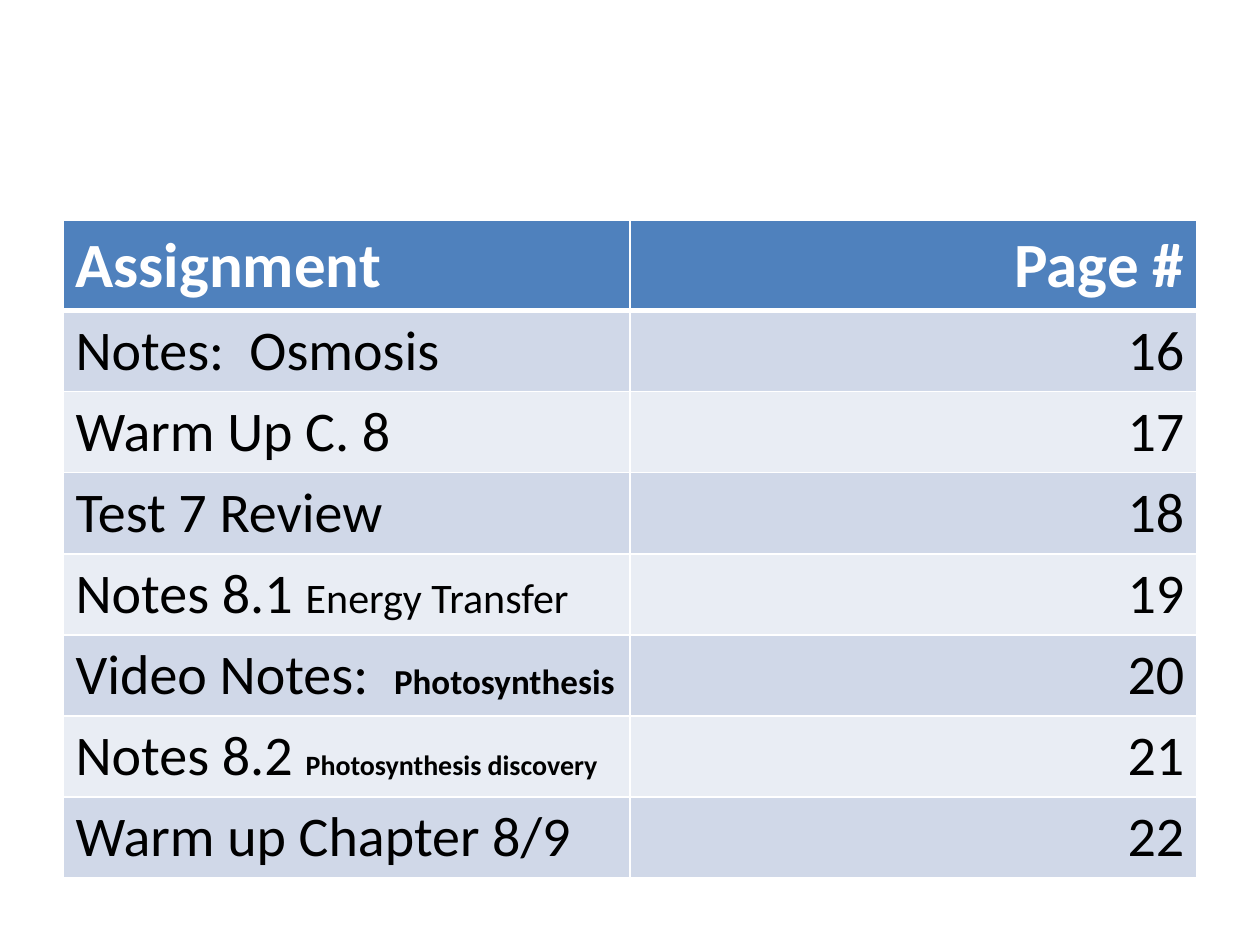
from lxml.etree import SubElement as Sub
from pptx import Presentation
from pptx.dml.color import RGBColor as RGB
from pptx.enum.text import PP_ALIGN as Align
from pptx.oxml.ns import qn
from pptx.util import Cm, Pt

COLORS = {
    "head": "4F81BD",
    "odd": "D0D8E8",
    "even": "E9EDF4",
    "line": "FFFFFF",
    "light": "FFFFFF",
    "dark": "000000",
}
HEAD = {"size": Pt(36), "bold": True}
BODY = {"size": Pt(32), "bold": False}

# Assignment, page, then an optional smaller tail with its format
ROWS = [
    ("Assignment", "Page #"),
    ("Notes:  Osmosis", "16"),
    ("Warm Up C. 8", "17"),
    ("Test 7 Review", "18"),
    ("Notes 8.1 ", "19", "Energy Transfer", {"size": Pt(24), "bold": False}),
    ("Video Notes:  ", "20", "Photosynthesis", {"size": Pt(20), "bold": True}),
    ("Notes 8.2 ", "21", "Photosynthesis discovery",
     {"size": Pt(16), "bold": True}),
    ("Warm up Chapter 8/9", "22"),
]


def add_run(para, text, style, color):
    run = para.add_run()
    run.text = text
    for name, value in {"name": "Calibri", **style}.items():
        setattr(run.font, name, value)
    run.font.color.rgb = RGB.from_string(COLORS[color])


def add_lines(cell, top, bottom):
    props = cell._tc.get_or_add_tcPr()
    for side, width in {"L": 1, "R": 1, "T": top, "B": bottom}.items():
        line = Sub(props, qn(f"a:ln{side}"), w=str(Pt(width)))
        fill = Sub(line, qn("a:solidFill"))
        Sub(fill, qn("a:srgbClr"), val=COLORS["line"])


def add_pages(slide, left, top, width, head, step):
    """Table of assignments with their page numbers."""
    height = head + step * (len(ROWS) - 1)
    table = slide.shapes.add_table(
        len(ROWS), 2, left, top, width, height).table
    for i, (task, page, *tail) in enumerate(ROWS):
        table.rows[i].height = step if i else head
        style, ink = (BODY, "dark") if i else (HEAD, "light")
        band = ("odd" if i % 2 else "even") if i else "head"
        for cell, text in zip(table.rows[i].cells, (task, page)):
            # Borders go before the fill in the cell properties
            add_lines(cell, 3 if i == 1 else 1, 1 if i else 3)
            cell.fill.solid()
            cell.fill.fore_color.rgb = RGB.from_string(COLORS[band])
            add_run(cell.text_frame.paragraphs[0], text, style, ink)
        if tail:
            add_run(table.cell(i, 0).text_frame.paragraphs[0], *tail, ink)
        table.cell(i, 1).text_frame.paragraphs[0].alignment = Align.RIGHT


def main():
    deck = Presentation()
    deck.slide_width, deck.slide_height = Cm(25.4), Cm(19.05)
    slide = deck.slides.add_slide(deck.slide_layouts[6])
    add_pages(slide, Cm(1.27), Cm(4.45), Cm(22.86), Cm(1.8), Cm(1.63))
    deck.save("out.pptx")


if __name__ == "__main__":
    main()
